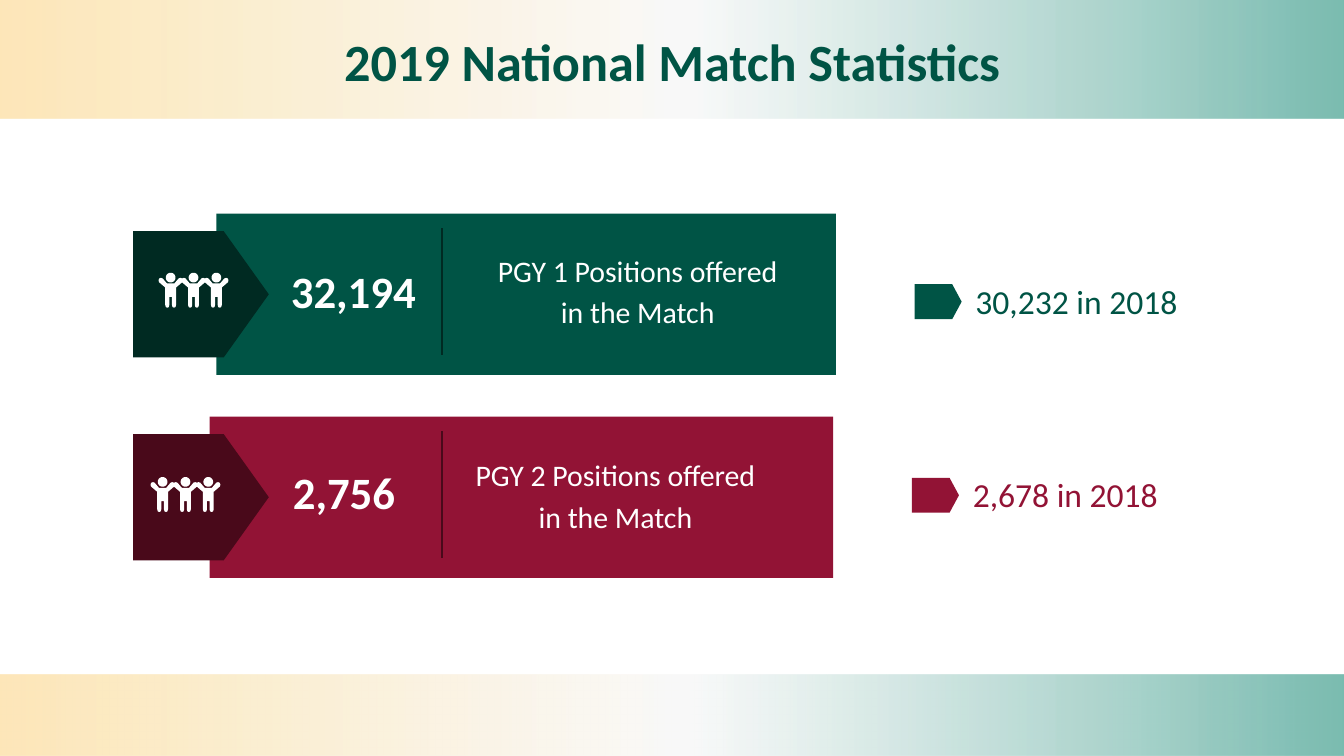
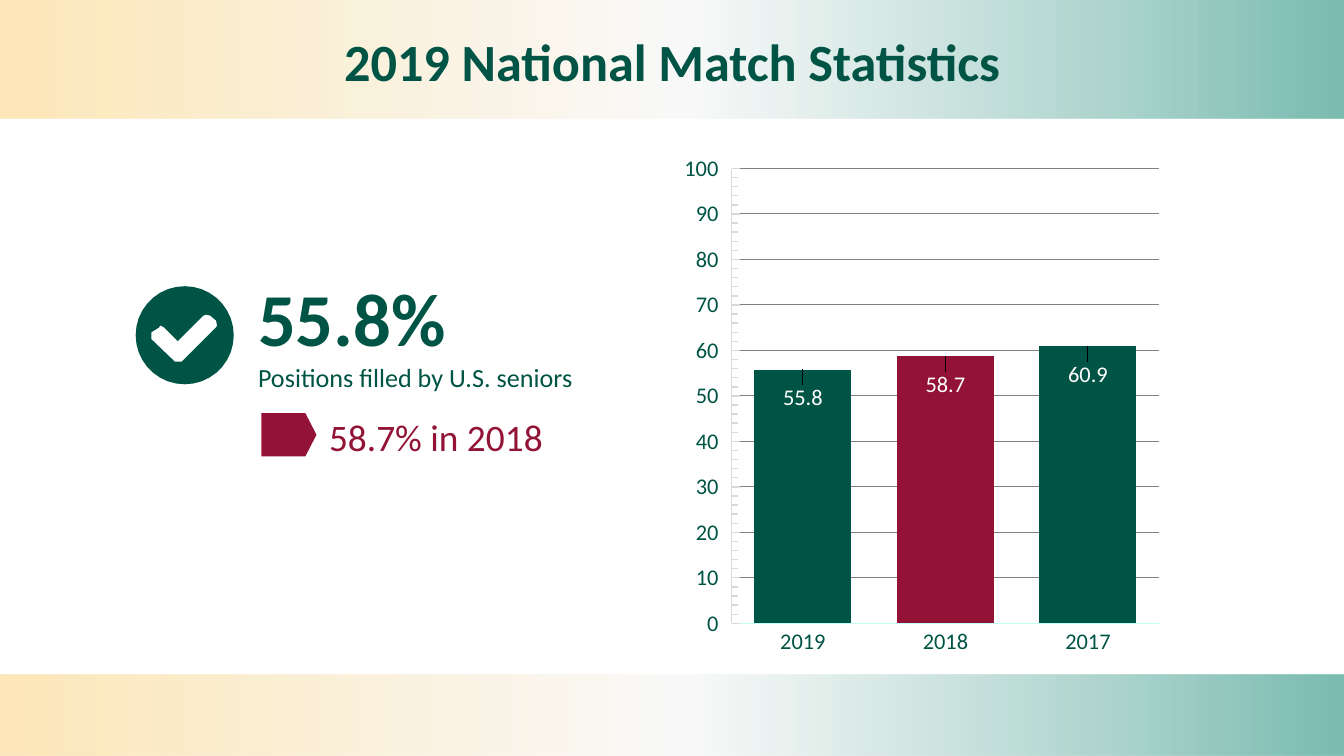
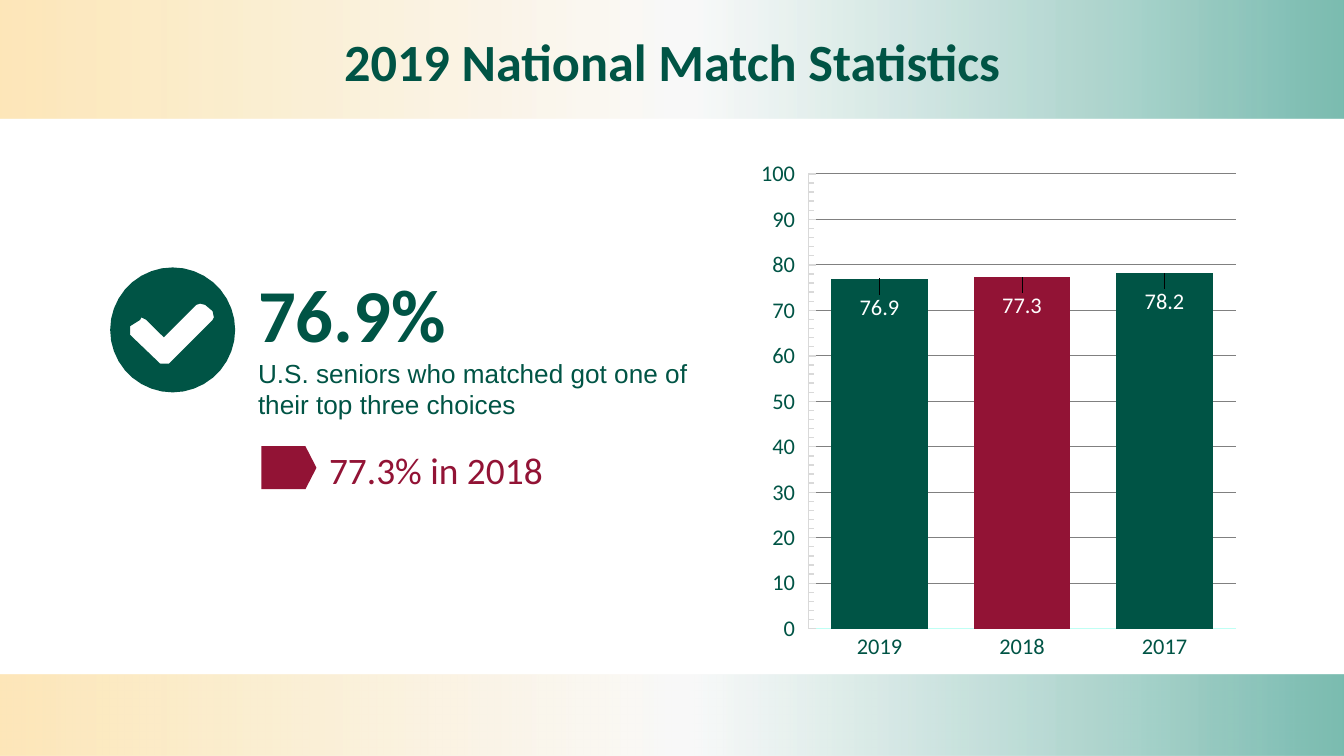
from math import cos, pi, sin

from lxml import etree
from pptx import Presentation
from pptx.chart.data import CategoryChartData
from pptx.dml.color import RGBColor
from pptx.enum.chart import XL_CHART_TYPE, XL_LABEL_POSITION, XL_TICK_LABEL_POSITION, XL_TICK_MARK
from pptx.enum.shapes import MSO_CONNECTOR, MSO_SHAPE
from pptx.enum.text import MSO_ANCHOR, PP_ALIGN
from pptx.oxml import parse_xml
from pptx.oxml.ns import nsdecls, qn
from pptx.util import Inches, Pt

RECT, PENTAGON = MSO_SHAPE.RECTANGLE, MSO_SHAPE.PENTAGON
TAG = MSO_SHAPE.FLOWCHART_OFFPAGE_CONNECTOR
STRAIGHT = MSO_CONNECTOR.STRAIGHT
LEFT, CENTER = PP_ALIGN.LEFT, PP_ALIGN.CENTER
TOP, MIDDLE = MSO_ANCHOR.TOP, MSO_ANCHOR.MIDDLE
COLUMNS = XL_CHART_TYPE.COLUMN_CLUSTERED
OUTSIDE_END = XL_LABEL_POSITION.OUTSIDE_END
LABELS_LOW = XL_TICK_LABEL_POSITION.LOW
TICK_IN, TICK_NONE = XL_TICK_MARK.INSIDE, XL_TICK_MARK.NONE

# Grid: 100 columns by 56.25 rows of square cells
GRID_COLUMNS, GRID_ROWS = 100, 56.25
CELL = 0.1

# Shared look
FONT = "Calibri"
GREEN, DARK_GREEN = "005445", "002A22"
RED, DARK_RED = "921335", "49091A"
WHITE = "FFFFFF"
TITLE = "2019 National Match Statistics"
BAND_STOPS = [(0, "FACB66", 46), (51, "F2F2F2", 43), (100, "007F68", 52)]
YEARS = ["2019", "2018", "2017"]


def circle(x, y, radius, steps=36):
    return [(x + radius * cos(2 * pi * i / steps), y + radius * sin(2 * pi * i / steps))
            for i in range(steps)]


# Icon outlines: the person in tenths of a cell, the badge in percent of its width
PERSON = [
    [(13, 11), (13, 24), (12.6, 25.6), (11.5, 26), (10.4, 25.6), (10, 24), (10, 18),
     (8, 18), (8, 24), (7.6, 25.6), (6.5, 26), (5.4, 25.6), (5, 24), (5, 11),
     (0.3, 7), (0, 5.5), (0.6, 4.2), (1.8, 3.8), (3, 4.2), (6.3, 8), (11.7, 8),
     (15, 4.2), (16.2, 3.8), (17.4, 4.2), (18, 5.5), (17.7, 7)],
    circle(9, 3.6, 3.6),
]
CHECK_BADGE = [
    circle(50, 50, 50),
    [(82, 35), (76, 30), (72, 29), (69, 30), (43, 56), (29, 42), (25, 40), (24, 42),
     (16, 47), (16, 54), (40, 77), (47, 77), (82, 42), (83, 40)],
]


def rgb(color):
    return RGBColor.from_string(color)


def cells(*counts):
    return [Inches(count * CELL) for count in counts]


def style_font(font, size, color, bold=False, name=FONT):
    font.name, font.size, font.bold = name, Pt(size), bold
    font.color.rgb = rgb(color)


def plain(shape, color):
    shape.shadow.inherit = False
    shape.fill.solid()
    shape.fill.fore_color.rgb = rgb(color)
    shape.line.fill.background()
    return shape


def block(slide, kind, at, color):
    return plain(slide.shapes.add_shape(kind, *cells(*at)), color)


def band(slide, top, height):
    strip = block(slide, RECT, (0, top, GRID_COLUMNS, height), WHITE)
    stops = "".join(
        f'<a:gs pos="{pos * 1000}"><a:srgbClr val="{color}">'
        f'<a:alpha val="{alpha * 1000}"/></a:srgbClr></a:gs>'
        for pos, color, alpha in BAND_STOPS)
    gradient = parse_xml(f'<a:gradFill {nsdecls("a")} rotWithShape="1"><a:gsLst>{stops}'
                         '</a:gsLst><a:lin ang="0" scaled="0"/></a:gradFill>')
    solid = strip.element.spPr.find(qn("a:solidFill"))
    solid.getparent().replace(solid, gradient)


def text(slide, at, lines, align=LEFT, anchor=TOP, inset=(0, 0), wrap=True, gap=0):
    """Each line is (wording, size, color, bold, font name); the last two are optional."""
    frame = slide.shapes.add_textbox(*cells(*at)).text_frame
    frame.word_wrap, frame.vertical_anchor = wrap, anchor
    frame.margin_left = frame.margin_right = Inches(inset[0])
    frame.margin_top = frame.margin_bottom = Inches(inset[1])
    for number, (wording, *look) in enumerate(lines):
        paragraph = frame.add_paragraph() if number else frame.paragraphs[0]
        paragraph.alignment = align
        if number and gap:
            paragraph.space_before = Pt(gap)
        run = paragraph.add_run()
        run.text = wording
        style_font(run.font, *look)


def divider(slide, x, top, bottom, color):
    line = slide.shapes.add_connector(STRAIGHT, *cells(x, top, x, bottom))
    line.line.color.rgb = rgb(color)
    line.line.width = Pt(1)
    etree.SubElement(line.element.spPr, qn("a:effectLst"))


def icon(slide, left, top, unit, outlines, color):
    placed = [[cells(left + x * unit, top + y * unit) for x, y in outline]
              for outline in outlines]
    builder = slide.shapes.build_freeform(*placed[0][0])
    for number, (start, *rest) in enumerate(placed):
        if number:
            builder.move_to(*start)
        builder.add_line_segments(rest, close=True)
    plain(builder.convert_to_shape(), color)


def comparison(slide, tag_at, text_at, wording, size, color):
    block(slide, TAG, tag_at, color).rotation = 270
    text(slide, text_at, [(wording, size, color)], inset=(0.1, 0.05))


def manual_layout(x, y, size=None):
    def value(tag, setting):
        return f'<c:{tag} val="{setting}"/>'

    parts = value("x", x) + value("y", y)
    if size:
        parts = (value("layoutTarget", "inner") + value("xMode", "edge")
                 + value("yMode", "edge") + parts + value("w", size[0]) + value("h", size[1]))
    return parse_xml(f'<c:layout {nsdecls("c")}><c:manualLayout>{parts}'
                     '</c:manualLayout></c:layout>')


def axis_look(axis, line_color):
    style_font(axis.tick_labels.font, 12, GREEN)
    axis.format.line.color.rgb = rgb(line_color)
    axis.format.line.width = Pt(0.75)


def year_chart(slide, left, top, values):
    data = CategoryChartData()
    data.categories = YEARS
    data.add_series("Series 1", values)
    chart = slide.shapes.add_chart(COLUMNS, *cells(left, top, 37, 38.9), data).chart
    chart.has_legend = chart.has_title = False
    style_font(chart.font, 10, GREEN)

    # Axes
    years, percent = chart.category_axis, chart.value_axis
    axis_look(years, "BFFFF4")
    years.major_tick_mark = years.minor_tick_mark = TICK_NONE
    axis_look(percent, "D9D9D9")
    percent.minimum_scale, percent.maximum_scale = 0, 100
    percent.major_unit, percent.minor_unit = 10, 2
    percent.major_tick_mark = percent.minor_tick_mark = TICK_IN
    percent.tick_label_position = LABELS_LOW
    percent.major_gridlines.format.line.color.rgb = rgb("808080")
    percent.major_gridlines.format.line.width = Pt(0.5)

    # Columns, with 2018 picked out
    plot = chart.plots[0]
    plot.gap_width, plot.overlap, plot.vary_by_categories = 47, -99, False
    series = plot.series[0]
    series.format.fill.solid()
    series.format.fill.fore_color.rgb = rgb(GREEN)
    highlight = series.points[YEARS.index("2018")].format.fill
    highlight.solid()
    highlight.fore_color.rgb = rgb(RED)

    # Labels moved down into the columns
    labels = [series.data_labels] + [series.points[i].data_label for i in range(len(values))]
    series.data_labels.show_value = True
    for label in labels:
        style_font(label.font, 12, WHITE)
        label.position = OUTSIDE_END
    for label in chart.element.iter(qn("c:dLbl")):
        label.find(qn("c:idx")).addnext(manual_layout(0, 0.09))

    area = chart.element.find(".//" + qn("c:plotArea"))
    for layout in area.findall(qn("c:layout")):
        area.remove(layout)
    area.insert(0, manual_layout(0.12, 0.05, (0.86, 0.87)))


def new_slide(deck):
    slide = deck.slides.add_slide(deck.slide_layouts[6])
    band(slide, 50.2, GRID_ROWS - 50.2)
    band(slide, 0, 8.8)
    text(slide, (3.4, 1.2, 93.2, 6.3), [(TITLE, 28, GREEN, True)], CENTER, inset=(0.1, 0.1))
    return slide


def positions_bar(slide, bar_at, arrow_top, people_at, count, count_at, wrap,
                  caption, caption_at, color, dark):
    block(slide, RECT, bar_at, color)
    divider(slide, 32.9, arrow_top - 0.2, arrow_top + 9.2, dark)
    text(slide, caption_at, [(line, 16, WHITE) for line in caption], CENTER, gap=3)
    text(slide, count_at, [(count, 24, WHITE, True)], CENTER, MIDDLE, wrap=wrap)
    block(slide, PENTAGON, (9.9, arrow_top, 10.1, 9.4), dark).adjustments[0] = 0.357
    left, top = people_at
    for person in range(3):
        icon(slide, left + 1.7 * person, top, 0.1, PERSON, WHITE)


def positions_slide(deck):
    slide = new_slide(deck)
    positions_bar(slide, (16.1, 15.9, 46.1, 12), 17.2, (11.8, 20.3),
                  "32,194", (21.6, 19.6, 9.4, 4), False,
                  ["PGY 1 Positions offered", "in the Match"], (33.2, 18.8, 28.5, 5.9),
                  GREEN, DARK_GREEN)
    positions_bar(slide, (15.6, 31, 46.4, 12), 32.3, (11.2, 35.5),
                  "2,756", (21, 34.6, 9.2, 4), True,
                  ["PGY 2 Positions offered", "in the Match"], (30, 34, 31.6, 5.9),
                  RED, DARK_RED)
    comparison(slide, (68.5, 20.7, 2.6, 3.5), (71.6, 20.4, 28.4, 4),
               "30,232 in 2018", 18, GREEN)
    comparison(slide, (68.3, 35.1, 2.6, 3.5), (71.4, 34.8, 28.6, 4),
               "2,678 in 2018", 18, RED)


def share_slide(deck, values, caption, caption_font, headline_at, badge_at, badge_width,
                comparison_top, chart_at):
    slide = new_slide(deck)
    text(slide, headline_at, [(f"{values[0]}%", 40, GREEN, True),
                              (caption, 14, GREEN, False, caption_font)])
    year_chart(slide, *chart_at, values)
    icon(slide, *badge_at, badge_width / 100, CHECK_BADGE, GREEN)
    comparison(slide, (19.9, comparison_top, 3.2, 4.1), (23.5, comparison_top, 26, 4.4),
               f"{values[1]}% in 2018", 20, RED)


def main():
    deck = Presentation()
    deck.slide_width, deck.slide_height = cells(GRID_COLUMNS, GRID_ROWS)
    positions_slide(deck)
    share_slide(deck, [55.8, 58.7, 60.9], "Positions filled by U.S. seniors", FONT,
                (19.2, 20.2, 32.4, 9.1), (10.1, 21.3), 7.3, 30.3, (50, 10.6))
    share_slide(deck, [76.9, 77.3, 78.2],
                "U.S. seniors who matched got one of their top three choices", "Arial",
                (19.2, 19.9, 32.4, 11.4), (8.2, 19.9), 9.3, 32.75, (55.7, 11))
    deck.save("out.pptx")


if __name__ == "__main__":
    main()
